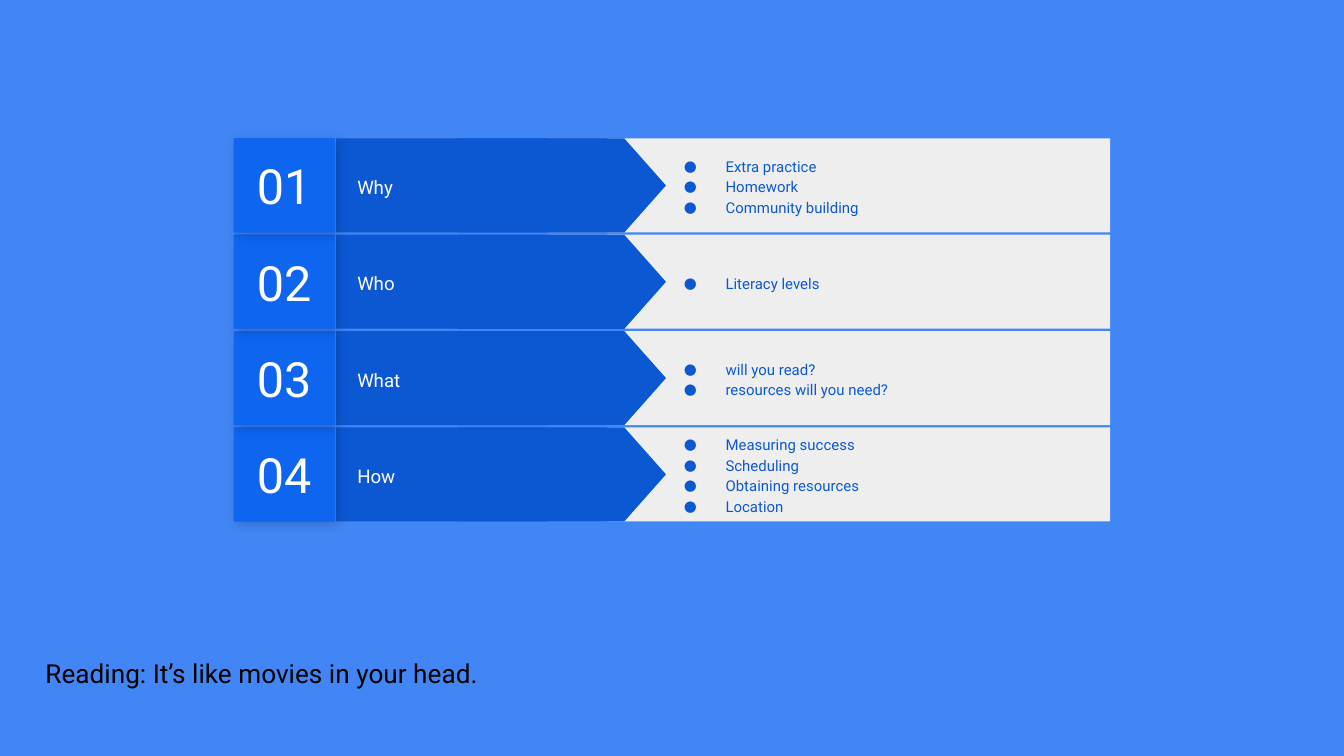
"""Build a slide of four numbered arrow rows with a caption below."""
from dataclasses import dataclass

from lxml.etree import SubElement as Sub
from pptx import Presentation as Deck
from pptx.dml.color import RGBColor as Color
from pptx.enum.shapes import MSO_AUTO_SHAPE_TYPE as Kind
from pptx.enum.text import MSO_ANCHOR as Anchor
from pptx.enum.text import MSO_AUTO_SIZE as Fit
from pptx.enum.text import PP_ALIGN as Align
from pptx.oxml.ns import qn
from pptx.util import Inches, Pt


@dataclass(frozen=True)
class Theme:
    font: str = "Roboto"
    back: str = "4285F4"
    panel: str = "EEEEEE"
    band: str = "0C58D3"
    under: str = "0D5DDF"
    badge: str = "0E65F0"
    white: str = "FFFFFF"
    black: str = "000000"
    number: int = 26
    head: int = 10
    point: int = 8
    caption: int = 14


THEME = Theme()
ROWS = [
    ("Why", ["Extra practice", "Homework", "Community building"]),
    ("Who", ["Literacy levels"]),
    ("What", ["will you read?", "resources will you need?"]),
    ("How", ["Measuring success", "Scheduling", "Obtaining resources", "Location"]),
]
WIDE = 10
TOP, LAST, TALL = 1.03, 3.18, 0.7
STEP = (LAST - TOP) / (len(ROWS) - 1)
INSET = Inches(0.1)
FRAME = dict(word_wrap=True, margin_left=INSET, margin_right=INSET,
             margin_top=INSET, margin_bottom=INSET)


def assign(item, values):
    for name, value in values.items():
        setattr(item, name, value)


def paint(fill, tint):
    fill.solid()
    fill.fore_color.rgb = Color.from_string(tint)


def block(shapes, kind, box, tint):
    shape = shapes.add_shape(kind, *map(Inches, box))
    paint(shape.fill, tint)
    shape.line.fill.background()
    shape.shadow.inherit = False
    return shape


def shade(shape):
    effects = shape._element.spPr.find(qn("a:effectLst"))
    outer = Sub(effects, qn("a:outerShdw"), blurRad=str(Pt(5.6)), dist=str(Pt(2.2)),
                dir="2700000", algn="bl", rotWithShape="0")
    tone = Sub(outer, qn("a:srgbClr"), val=THEME.black)
    Sub(tone, qn("a:alpha"), val="17000")


def dot(para, size, tint):
    props = para._p.get_or_add_pPr()
    props.set("marL", str(Inches(0.5)))
    props.set("indent", str(Inches(-0.31)))
    Sub(Sub(props, qn("a:buClr")), qn("a:srgbClr"), val=tint)
    Sub(props, qn("a:buSzPts"), val=str(size * 100))
    Sub(props, qn("a:buFont"), typeface=THEME.font)
    Sub(props, qn("a:buChar"), char="●")


def write(shape, lines, size, tint, anchor=Anchor.MIDDLE, bullet=False, **form):
    frame = shape.text_frame
    assign(frame, {**FRAME, "vertical_anchor": anchor})
    frame.text = "\n".join(lines)
    for para in frame.paragraphs:
        assign(para, form)
        font = para.runs[0].font
        assign(font, dict(name=THEME.font, size=Pt(size)))
        font.color.rgb = Color.from_string(tint)
        if bullet:
            dot(para, size, tint)
    return frame


def label(shapes, box, lines, size, tint, **form):
    return write(shapes.add_textbox(*map(Inches, box)), lines, size, tint, **form)


def add_row(slide, index, head, points):
    shapes = slide.shapes.add_group_shape().shapes
    top = TOP + index * STEP
    badge = (1.74, top, 0.75, TALL)
    block(shapes, Kind.RECTANGLE, (4.08, top, 4.18, TALL), THEME.panel)
    block(shapes, Kind.RECTANGLE, (2.5, top, 2.02, TALL), THEME.band)
    long = 1.55
    arrow = block(shapes, Kind.FLOWCHART_OFFPAGE_CONNECTOR,
                  (3.83, top + (TALL - long) / 2, TALL, long), THEME.band)
    arrow.rotation = 270
    label(shapes, (2.56, top + 0.08, 2.12, 0.54), [head], THEME.head, THEME.white,
          line_spacing=1.15)
    shade(block(shapes, Kind.RECTANGLE, badge, THEME.under))
    write(block(shapes, Kind.RECTANGLE, badge, THEME.badge), [f"{index + 1:02}"],
          THEME.number, THEME.white, alignment=Align.CENTER)
    label(shapes, (4.8, top, 3.25, TALL), points, THEME.point, THEME.band,
          bullet=True, line_spacing=1.15)


def main():
    deck = Deck()
    assign(deck, dict(slide_width=Inches(WIDE), slide_height=Inches(WIDE * 9 / 16)))
    slide = deck.slides.add_slide(deck.slide_layouts[6])
    paint(slide.background.fill, THEME.back)
    for index, (head, points) in reversed(list(enumerate(ROWS))):
        add_row(slide, index, head, points)
    frame = label(slide.shapes, (0.24, 4.79, 9.34, 0.44),
                  ["Reading: It’s like movies in your head."],
                  THEME.caption, THEME.black, anchor=Anchor.TOP)
    frame.auto_size = Fit.SHAPE_TO_FIT_TEXT
    deck.save("out.pptx")


if __name__ == "__main__":
    main()
